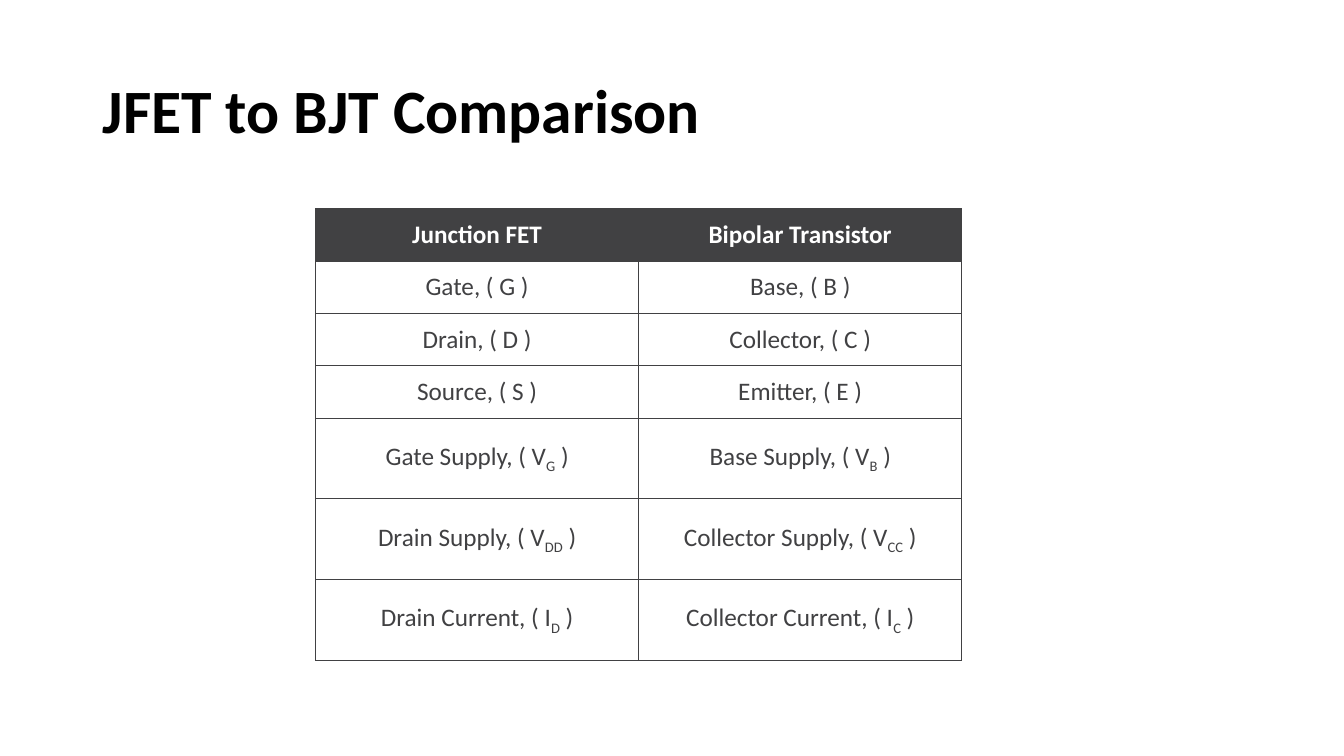
from dataclasses import dataclass

from lxml import etree
from pptx import Presentation
from pptx.dml.color import RGBColor
from pptx.enum.text import MSO_ANCHOR as Anchor, PP_ALIGN as Align
from pptx.oxml.ns import qn
from pptx.util import Inches, Pt

FONT = "Calibri"
BLACK, WHITE, GREY = "000000", "FFFFFF", "414143"


@dataclass
class Term:
    name: str
    symbol: str = ""
    subscript: str = ""


@dataclass
class Row:
    jfet: Term
    bjt: Term
    height: float = 0.52


ROWS = [
    Row(Term("Junction FET"), Term("Bipolar Transistor")),
    Row(Term("Gate", "G"), Term("Base", "B")),
    Row(Term("Drain", "D"), Term("Collector", "C")),
    Row(Term("Source", "S"), Term("Emitter", "E")),
    Row(Term("Gate Supply", "V", "G"), Term("Base Supply", "V", "B"), 0.8),
    Row(Term("Drain Supply", "V", "DD"), Term("Collector Supply", "V", "CC"), 0.8),
    Row(Term("Drain Current", "I", "D"), Term("Collector Current", "I", "C"), 0.8),
]


def rgb(color: str) -> RGBColor:
    return RGBColor.from_string(color)


def add_run(p, text: str, size: float, color: str, bold: bool = False,
            subscript: bool = False) -> None:
    r = p.add_run()
    r.text = text
    r.font.name, r.font.size, r.font.bold = FONT, Pt(size), bold
    r.font.color.rgb = rgb(color)
    if subscript:
        r._r.get_or_add_rPr().set("baseline", "-25000")


def add_borders(cell, color: str, width: float) -> None:
    tc_pr = cell._tc.get_or_add_tcPr()
    for i, side in enumerate(("lnL", "lnR", "lnT", "lnB")):
        ln = etree.Element(qn(f"a:{side}"), w=str(Pt(width)))
        fill = etree.SubElement(ln, qn("a:solidFill"))
        etree.SubElement(fill, qn("a:srgbClr"), val=color)
        tc_pr.insert(i, ln)


def fill_cell(cell, term: Term, header: bool) -> None:
    cell.vertical_anchor = Anchor.MIDDLE
    cell.margin_left = cell.margin_right = Inches(0.05)
    cell.margin_top = cell.margin_bottom = Inches(0.1)
    if header:
        cell.fill.solid()
        cell.fill.fore_color.rgb = rgb(GREY)
    else:
        cell.fill.background()
    add_borders(cell, GREY, 0.75)

    p = cell.text_frame.paragraphs[0]
    p.alignment = Align.CENTER
    if header:
        add_run(p, term.name, 18, WHITE, bold=True)
        return
    # Non-breaking spaces keep each symbol inside its brackets
    add_run(p, f"{term.name}, ( {term.symbol}", 18, GREY)
    if term.subscript:
        add_run(p, term.subscript, 18, GREY, subscript=True)
    add_run(p, " )", 18, GREY)


def add_title(s, text: str) -> None:
    title = s.shapes.title
    title.left, title.top = Inches(0.92), Inches(0.4)
    title.width, title.height = Inches(11.5), Inches(1.45)
    tf = title.text_frame
    tf.word_wrap = True
    tf.vertical_anchor = Anchor.MIDDLE
    p = tf.paragraphs[0]
    p.alignment = Align.LEFT
    p.line_spacing = 0.9
    add_run(p, text, 44, BLACK, bold=True)


def add_comparison(s, rows: list[Row]) -> None:
    height = sum(row.height for row in rows)
    table = s.shapes.add_table(len(rows), 2, Inches(3.13), Inches(2.07),
                               Inches(6.41), Inches(height)).table
    table.horz_banding = False
    for i, row in enumerate(rows):
        table.rows[i].height = Inches(row.height)
        for j, term in enumerate((row.jfet, row.bjt)):
            fill_cell(table.cell(i, j), term, header=i == 0)


def main() -> None:
    prs = Presentation()
    prs.slide_width, prs.slide_height = Inches(13.33), Inches(7.5)
    s = prs.slides.add_slide(prs.slide_layouts[5])

    # Title
    add_title(s, "JFET to BJT Comparison")

    # Comparison table
    add_comparison(s, ROWS)

    prs.save("out.pptx")


if __name__ == "__main__":
    main()
